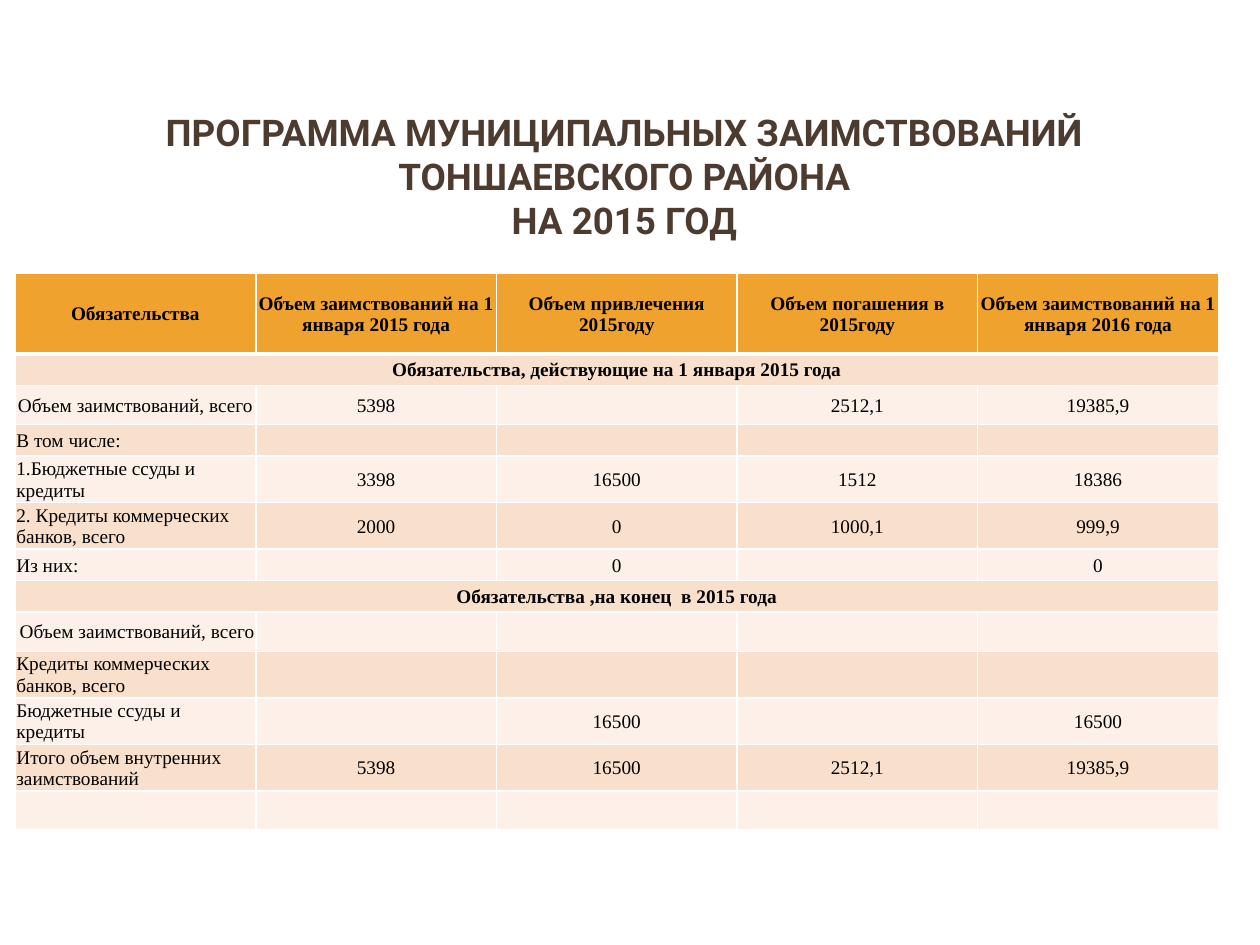
from dataclasses import dataclass

from lxml.etree import SubElement
from pptx import Presentation
from pptx.dml.color import RGBColor
from pptx.enum.text import MSO_ANCHOR as Anchor, MSO_AUTO_SIZE as AutoSize, PP_ALIGN as Align
from pptx.oxml.ns import qn
from pptx.util import Inches, Pt


@dataclass(frozen=True)
class Theme:
    title_font: str = "Roboto"
    table_font: str = "Times New Roman"
    title_size: int = 21
    table_size: int = 11
    title_color: str = "4E3B30"
    text_color: str = "000000"
    border_color: str = "FFFFFF"
    header_fill: str = "F0A22E"
    band_fills: tuple = ("FCF0E8", "F9E0CD")  # even rows, odd rows


THEME = Theme()

TITLE = "ПРОГРАММА МУНИЦИПАЛЬНЫХ ЗАИМСТВОВАНИЙ ТОНШАЕВСКОГО РАЙОНА\vНА 2015 ГОД"
HEADERS = ["Обязательства", "Объем заимствований на 1 января 2015 года",
           "Объем привлечения 2015году", "Объем погашения в 2015году",
           "Объем заимствований на 1 января 2016 года"]
EMPTY = [""] * 4

# (height in inches, label alignment, label, values); section rows have no values
ROWS = [
    (0.64, Align.CENTER, HEADERS[0], HEADERS[1:]),
    (0.25, Align.CENTER, "Обязательства, действующие на 1 января 2015 года", None),
    (0.31, Align.CENTER, "Объем заимствований, всего", ["5398", "", "2512,1", "19385,9"]),
    (0.25, Align.LEFT, "В том числе:", EMPTY),
    (0.37, Align.LEFT, "1.Бюджетные ссуды и кредиты", ["3398", "16500", "1512", "18386"]),
    (0.37, Align.LEFT, "2. Кредиты коммерческих банков, всего",
     ["2000", "0", "1000,1", "999,9"]),
    (0.25, Align.LEFT, "Из них:", ["", "0", "", "0"]),
    (0.25, Align.CENTER, "Обязательства ,на конец  в 2015 года", None),
    (0.31, Align.RIGHT, "Объем заимствований, всего", EMPTY),
    (0.37, Align.LEFT, "Кредиты коммерческих банков, всего", EMPTY),
    (0.37, Align.LEFT, "Бюджетные ссуды и кредиты", ["", "16500", "", "16500"]),
    (0.37, Align.LEFT, "Итого объем внутренних заимствований",
     ["5398", "16500", "2512,1", "19385,9"]),
    (0.31, Align.LEFT, "", EMPTY),
]


def set_font(paragraph, name, size, color, bold):
    font = paragraph.font
    font.name, font.size, font.bold = name, Pt(size), bold
    font.color.rgb = RGBColor.from_string(color)


def set_borders(cell, bottom_width):
    properties = cell._tc.get_or_add_tcPr()
    widths = {"a:lnL": 1, "a:lnR": 1, "a:lnT": 1, "a:lnB": bottom_width}
    for position, (side, width) in enumerate(widths.items()):
        line = SubElement(properties, qn(side), w=str(Pt(width)))
        fill = SubElement(line, qn("a:solidFill"))
        SubElement(fill, qn("a:srgbClr"), val=THEME.border_color)
        properties.insert(position, line)  # borders come before the fill


def format_cell(cell, text, align, fill, bold, bottom_width):
    cell.text = text
    cell.vertical_anchor = Anchor.MIDDLE
    cell.margin_left = cell.margin_right = cell.margin_top = Inches(0.01)
    cell.margin_bottom = 0
    cell.fill.solid()
    cell.fill.fore_color.rgb = RGBColor.from_string(fill)
    set_borders(cell, bottom_width)
    paragraph = cell.text_frame.paragraphs[0]
    paragraph.alignment = align
    set_font(paragraph, THEME.table_font, THEME.table_size, THEME.text_color, bold)
    if not text:  # keeps empty cells from stretching the row
        paragraph._p.get_or_add_endParaRPr().set("sz", str(THEME.table_size * 100))


def place_title(slide, left, top, width, height):
    title = slide.shapes.title
    title.left, title.top, title.width, title.height = left, top, width, height
    frame = title.text_frame
    frame.text = TITLE
    frame.word_wrap = True
    frame.auto_size = AutoSize.NONE
    frame.vertical_anchor = Anchor.MIDDLE
    frame.margin_top, frame.margin_bottom = Inches(0.05), Inches(0.39)
    heading = frame.paragraphs[0]
    heading.alignment = Align.CENTER
    set_font(heading, THEME.title_font, THEME.title_size, THEME.title_color, True)


def place_borrowings(slide, left, top, width, height):
    columns = len(HEADERS)
    table = slide.shapes.add_table(len(ROWS), columns, left, top, width, height).table
    for column in table.columns:
        column.width = width // columns
    for index, (row_height, label_align, label, values) in enumerate(ROWS):
        is_header, is_section = index == 0, values is None
        table.rows[index].height = Inches(row_height)
        fill = THEME.header_fill if is_header else THEME.band_fills[index % 2]
        for position, text in enumerate([label, *(values or EMPTY)]):
            format_cell(table.cell(index, position), text,
                        Align.CENTER if position else label_align, fill,
                        is_header or is_section, 3 if is_header else 1)
        if is_section:
            table.cell(index, 0).merge(table.cell(index, columns - 1))


def main():
    deck = Presentation()
    deck.slide_width, deck.slide_height = Inches(10), Inches(7.5)
    slide = deck.slides.add_slide(deck.slide_layouts.get_by_name("Title Only"))
    place_title(slide, Inches(0.53), Inches(1.24), Inches(8.85), Inches(0.65))
    place_borrowings(slide, Inches(0.12), Inches(2.17), Inches(9.55), Inches(4.43))
    deck.save("out.pptx")


if __name__ == "__main__":
    main()
